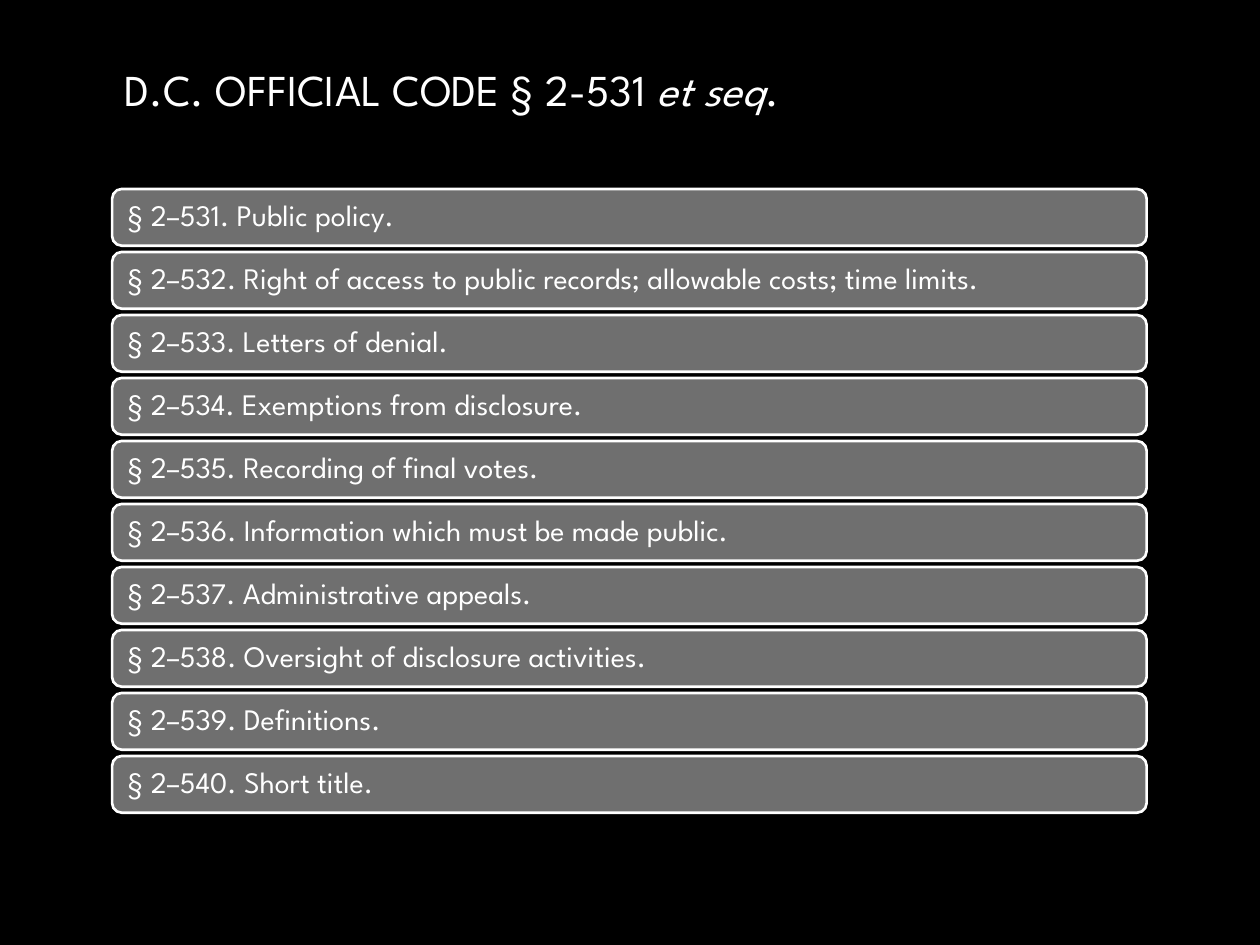
from dataclasses import dataclass

from lxml import etree
from pptx import Presentation
from pptx.dml.color import RGBColor
from pptx.enum.shapes import MSO_SHAPE
from pptx.enum.text import MSO_ANCHOR, PP_ALIGN
from pptx.oxml.ns import qn
from pptx.util import Inches, Pt

ROUNDED = MSO_SHAPE.ROUNDED_RECTANGLE
MIDDLE = MSO_ANCHOR.MIDDLE
LEFT_ALIGN = PP_ALIGN.LEFT

TITLE = [("D.C. OFFICIAL CODE § 2-531 ", False), ("et seq", True), (".", False)]
FIRST_SECTION = 531
SECTIONS = [
    "Public policy.",
    "Right of access to public records; allowable costs; time limits.",
    "Letters of denial.",
    "Exemptions from disclosure.",
    "Recording of final votes.",
    "Information which must be made public.",
    "Administrative appeals.",
    "Oversight of disclosure activities.",
    "Definitions.",
    "Short title.",
]

LEFT, WIDTH = 0.89, 8.21
TITLE_TOP, TITLE_HEIGHT = 0.35, 0.71
ROWS_TOP, ROW_HEIGHT, ROW_PITCH = 1.5, 0.45, 0.5
INSET = 0.1


@dataclass(frozen=True)
class Theme:
    font: str = "League Spartan"
    background: str = "000000"
    text: str = "FFFFFF"
    bar: str = "6F6F6F"
    outline: str = "FFFFFF"
    shadow: str = "404040"
    title_size: float = 25.2
    row_size: float = 17
    outline_width: float = 1.5


THEME = Theme()


def color(value):
    return RGBColor.from_string(value)


def add_shadow(span):
    effects = etree.Element(qn("a:effectLst"))
    shadow = etree.SubElement(effects, qn("a:outerShdw"),
                              blurRad="38100", dist="25400", dir="2700000")
    etree.SubElement(shadow, qn("a:srgbClr"), val=THEME.shadow)
    span.font.fill._xPr.find(qn("a:solidFill")).addnext(effects)


def write_text(box, runs, size, line_spacing=1.0, shadow=False):
    frame = box.text_frame
    frame.word_wrap = True
    frame.vertical_anchor = MIDDLE
    frame.margin_left = frame.margin_right = Inches(INSET)
    frame.margin_top = frame.margin_bottom = Inches(0.05)
    para = frame.paragraphs[0]
    para.alignment = LEFT_ALIGN
    para.line_spacing = line_spacing
    for text, italic in runs:
        span = para.add_run()
        span.text = text
        span.font.name = THEME.font
        span.font.size = Pt(size)
        span.font.italic = italic
        span.font.color.rgb = color(THEME.text)
        if shadow:
            add_shadow(span)


def add_section_bar(page, index, heading):
    bar = page.shapes.add_shape(
        ROUNDED, Inches(LEFT), Inches(ROWS_TOP + index * ROW_PITCH),
        Inches(WIDTH), Inches(ROW_HEIGHT))
    bar.shadow.inherit = False
    bar.fill.solid()
    bar.fill.fore_color.rgb = color(THEME.bar)
    bar.line.color.rgb = color(THEME.outline)
    bar.line.width = Pt(THEME.outline_width)
    label = f"§ 2–{FIRST_SECTION + index}. {heading}"
    write_text(bar, [(label, False)], THEME.row_size, line_spacing=0.9)


def main():
    deck = Presentation()
    deck.slide_width, deck.slide_height = Inches(10), Inches(7.5)
    page = deck.slides.add_slide(deck.slide_layouts[6])
    page.background.fill.solid()
    page.background.fill.fore_color.rgb = color(THEME.background)

    title = page.shapes.add_textbox(
        Inches(LEFT), Inches(TITLE_TOP), Inches(WIDTH), Inches(TITLE_HEIGHT))
    write_text(title, TITLE, THEME.title_size, shadow=True)
    for index, heading in enumerate(SECTIONS):
        add_section_bar(page, index, heading)
    deck.save("out.pptx")


if __name__ == "__main__":
    main()
